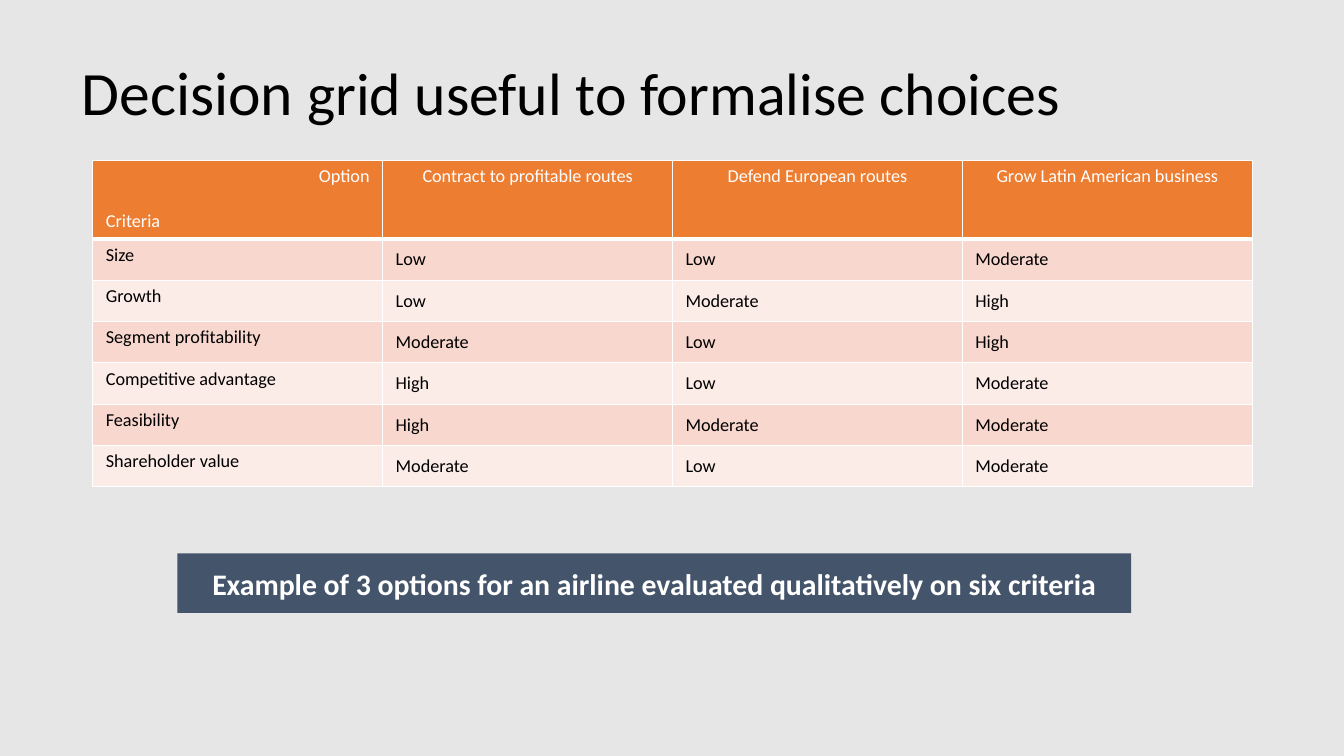
"""Build a slide with a decision grid of three airline options against six criteria."""
from lxml.etree import SubElement
from pptx import Presentation
from pptx.dml.color import RGBColor
from pptx.enum.shapes import MSO_SHAPE
from pptx.enum.text import MSO_ANCHOR as ANCHOR, MSO_AUTO_SIZE, PP_ALIGN as ALIGN
from pptx.oxml.ns import qn
from pptx.util import Inches, Pt

COLORS = {"bg": "E7E6E6", "black": "000000", "white": "FFFFFF", "header": "ED7D31",
          "odd": "F8D7CE", "even": "FCECE8", "banner": "44546A"}
FONT = "Calibri"
TITLE = [("Decision", 44), (" grid useful to formalise choices", 42.7)]
CORNER = [("Option", ALIGN.RIGHT, 0), ("Criteria", ALIGN.LEFT, 15.9)]
OPTIONS = ["Contract to profitable routes", "Defend European routes",
           "Grow Latin American business"]
RATINGS = [
    ("Size", "Low", "Low", "Moderate"),
    ("Growth", "Low", "Moderate", "High"),
    ("Segment profitability", "Moderate", "Low", "High"),
    ("Competitive advantage", "High", "Low", "Moderate"),
    ("Feasibility", "High", "Moderate", "Moderate"),
    ("Shareholder value", "Moderate", "Low", "Moderate"),
]
BANNER = "Example of 3 options for an airline evaluated qualitatively on six criteria"
GRID = {"left": 0.92, "top": 1.59, "width": 11.5, "header": 0.78, "row": 0.41}
CELL = {"margin_left": Inches(0.13), "margin_right": Inches(0.13),
        "margin_top": Inches(0.05), "margin_bottom": Inches(0.05)}


def rgb(name):
    return RGBColor.from_string(COLORS[name])


def set_all(obj, values):
    for key, value in values.items():
        setattr(obj, key, value)


def add_run(p, text, size, color, bold=False):
    r = p.add_run()
    r.text = text
    set_all(r.font, {"name": FONT, "size": Pt(size), "bold": bold})
    r.font.color.rgb = rgb(color)


def style_cell(cell, fill, bottom, anchor):
    set_all(cell, {**CELL, "vertical_anchor": anchor})
    tcPr = cell._tc.get_or_add_tcPr()
    for side, width in (("L", 1), ("R", 1), ("T", 1), ("B", bottom)):
        ln = SubElement(tcPr, qn(f"a:ln{side}"), w=str(Pt(width)))
        SubElement(SubElement(ln, qn("a:solidFill")), qn("a:srgbClr"), val=COLORS["white"])
    cell.fill.solid()
    cell.fill.fore_color.rgb = rgb(fill)


def add_title(slide):
    sp = slide.shapes.title
    set_all(sp, {"left": Inches(0.71), "top": Inches(0.22),
                 "width": Inches(10.82), "height": Inches(1.45)})
    set_all(sp.text_frame, {"word_wrap": True, "auto_size": MSO_AUTO_SIZE.NONE,
                            "vertical_anchor": ANCHOR.MIDDLE})
    p = sp.text_frame.paragraphs[0]
    set_all(p, {"alignment": ALIGN.LEFT, "line_spacing": 0.9})
    for text, size in TITLE:
        add_run(p, text, size, "black")


def add_grid(slide):
    heights = [GRID["header"]] + [GRID["row"]] * len(RATINGS)
    n_cols = len(OPTIONS) + 1
    box = [Inches(v) for v in (GRID["left"], GRID["top"], GRID["width"], sum(heights))]
    table = slide.shapes.add_table(len(heights), n_cols, *box).table
    for col in table.columns:
        col.width = Inches(GRID["width"] / n_cols)
    for row, height in zip(table.rows, heights):
        row.height = Inches(height)

    header = [CORNER] + [[(option, ALIGN.CENTER, 0)] for option in OPTIONS]
    body = [[[(text, ALIGN.LEFT, 0)] for text in row] for row in RATINGS]
    for i, row in enumerate([header] + body):
        fill = "header" if i == 0 else "odd" if i % 2 else "even"
        for j, lines in enumerate(row):
            cell = table.cell(i, j)
            style_cell(cell, fill, 1 if i else 3, ANCHOR.MIDDLE if i and j else ANCHOR.TOP)
            tf = cell.text_frame
            for k, (text, align, before) in enumerate(lines):
                p = tf.add_paragraph() if k else tf.paragraphs[0]
                p.alignment = align
                if before:
                    p.space_before = Pt(before)
                add_run(p, text, 13, "black" if i else "white")


def add_banner(slide):
    box = [Inches(v) for v in (1.76, 5.49, 9.46, 0.59)]
    sp = slide.shapes.add_shape(MSO_SHAPE.RECTANGLE, *box)
    sp.shadow.inherit = False
    sp.fill.solid()
    sp.fill.fore_color.rgb = rgb("banner")
    sp.line.fill.background()
    set_all(sp.text_frame, {"word_wrap": True, "vertical_anchor": ANCHOR.MIDDLE,
                            "margin_left": Inches(0.04), "margin_right": Inches(0.04)})
    p = sp.text_frame.paragraphs[0]
    p.alignment = ALIGN.CENTER
    add_run(p, BANNER, 21.3, "white", bold=True)


def main():
    prs = Presentation()
    set_all(prs, {"slide_width": Inches(13.33), "slide_height": Inches(7.5)})
    slide = prs.slides.add_slide(prs.slide_layouts[5])
    slide.background.fill.solid()
    slide.background.fill.fore_color.rgb = rgb("bg")
    add_title(slide)
    add_grid(slide)
    add_banner(slide)
    prs.save("out.pptx")


if __name__ == "__main__":
    main()
